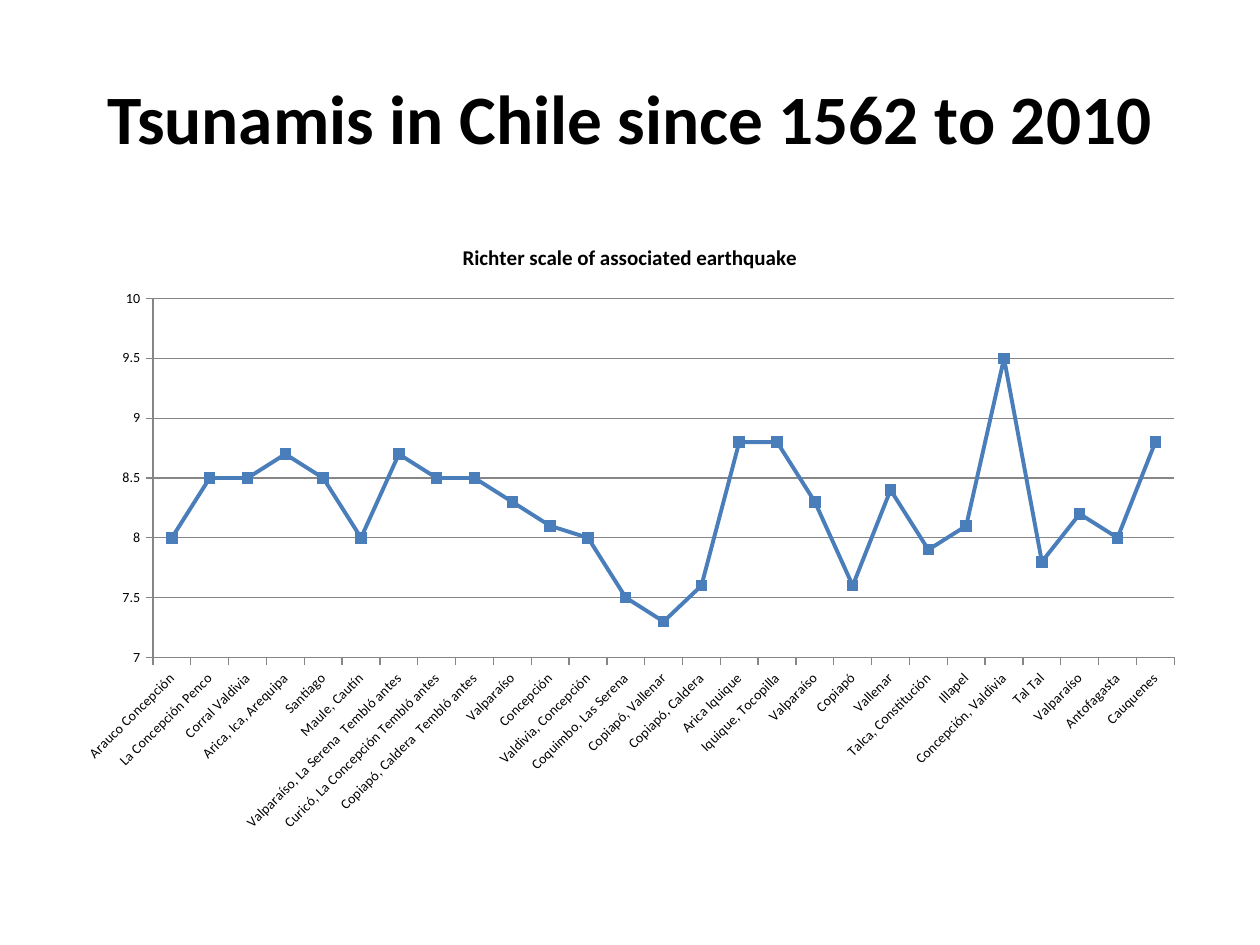
from pptx import Presentation
from pptx.chart.data import CategoryChartData
from pptx.dml.color import RGBColor
from pptx.enum.chart import XL_CHART_TYPE as ChartType, XL_MARKER_STYLE as MarkerStyle, XL_TICK_MARK as TickMark
from pptx.enum.text import MSO_ANCHOR as Anchor, PP_ALIGN as Align
from pptx.util import Cm, Pt

COLORS = {"text": "000000", "series": "4A7EBB", "axis": "868686"}
FONT = "Calibri"


def color(name):
    return RGBColor.from_string(COLORS[name])


def style_font(font, size, bold=False):
    font.name = FONT
    font.size = Pt(size)
    font.bold = bold
    font.color.rgb = color("text")


tsunamis = [
    ("Arauco Concepción", 8), ("La Concepción Penco", 8.5), ("Corral Valdivia", 8.5),
    ("Arica, Ica, Arequipa", 8.7), ("Santiago", 8.5), ("Maule, Cautín", 8),
    ("Valparaíso, La Serena  Tembló antes", 8.7),
    ("Curicó, La Concepción Tembló antes", 8.5),
    ("Copiapó, Caldera  Tembló antes", 8.5),
    ("Valparaíso", 8.3), ("Concepción", 8.1), ("Valdivia, Concepción", 8),
    ("Coquimbo, Las Serena", 7.5), ("Copiapó, Vallenar", 7.3), ("Copiapó, Caldera", 7.6),
    ("Arica Iquique", 8.8), ("Iquique, Tocopilla", 8.8), ("Valparaíso", 8.3),
    ("Copiapó", 7.6), ("Vallenar", 8.4), ("Talca, Constitución", 7.9),
    ("Illapel", 8.1), ("Concepción, Valdivia", 9.5), ("Tal Tal", 7.8),
    ("Valparaíso", 8.2), ("Antofagasta", 8), ("Cauquenes", 8.8),
]

presentation = Presentation()
presentation.slide_width = Cm(25.4)
presentation.slide_height = Cm(19.05)
slide = presentation.slides.add_slide(presentation.slide_layouts[5])

title = slide.shapes.title
title.left, title.top, title.width, title.height = Cm(1.27), Cm(0.76), Cm(22.86), Cm(3.18)
title.text_frame.text = "Tsunamis in Chile since 1562 to 2010"
title.text_frame.vertical_anchor = Anchor.MIDDLE
paragraph = title.text_frame.paragraphs[0]
paragraph.alignment = Align.CENTER
style_font(paragraph.font, 39.6, bold=True)

chart_data = CategoryChartData()
chart_data.categories = [place for place, magnitude in tsunamis]
chart_data.add_series("Series 1", [magnitude for place, magnitude in tsunamis])
chart = slide.shapes.add_chart(
    ChartType.LINE_MARKERS_STACKED, Cm(1.27), Cm(4.45), Cm(22.86), Cm(12.57), chart_data
).chart
style_font(chart.font, 10)
chart.has_legend = False
chart.has_title = True
chart.chart_title.include_in_layout = False
chart.chart_title.text_frame.text = "Richter scale of associated earthquake"
style_font(chart.chart_title.text_frame.paragraphs[0].font, 12, bold=True)

for axis in (chart.category_axis, chart.value_axis):
    style_font(axis.tick_labels.font, 8)
    axis.major_tick_mark = TickMark.OUTSIDE
    axis.minor_tick_mark = TickMark.NONE
    axis.format.line.color.rgb = color("axis")
    axis.format.line.width = Pt(0.75)

value_axis = chart.value_axis
value_axis.minimum_scale = 7
value_axis.maximum_scale = 10
value_axis.major_unit = 0.5
value_axis.has_major_gridlines = True
value_axis.major_gridlines.format.line.color.rgb = color("axis")
value_axis.major_gridlines.format.line.width = Pt(0.75)
value_axis.tick_labels.number_format = "General"
value_axis.tick_labels.number_format_is_linked = False

label_body = chart.category_axis._element.find(".//{*}txPr/{*}bodyPr")
label_body.set("rot", "-2700000")
label_body.set("vert", "horz")

plot = chart.plots[0]
plot.vary_by_categories = False
series = plot.series[0]
series.smooth = False
series.format.line.color.rgb = color("series")
series.format.line.width = Pt(2.25)
series.marker.style = MarkerStyle.SQUARE
series.marker.size = 6
series.marker.format.fill.solid()
series.marker.format.fill.fore_color.rgb = color("series")
series.marker.format.line.color.rgb = color("series")

presentation.save("out.pptx")
